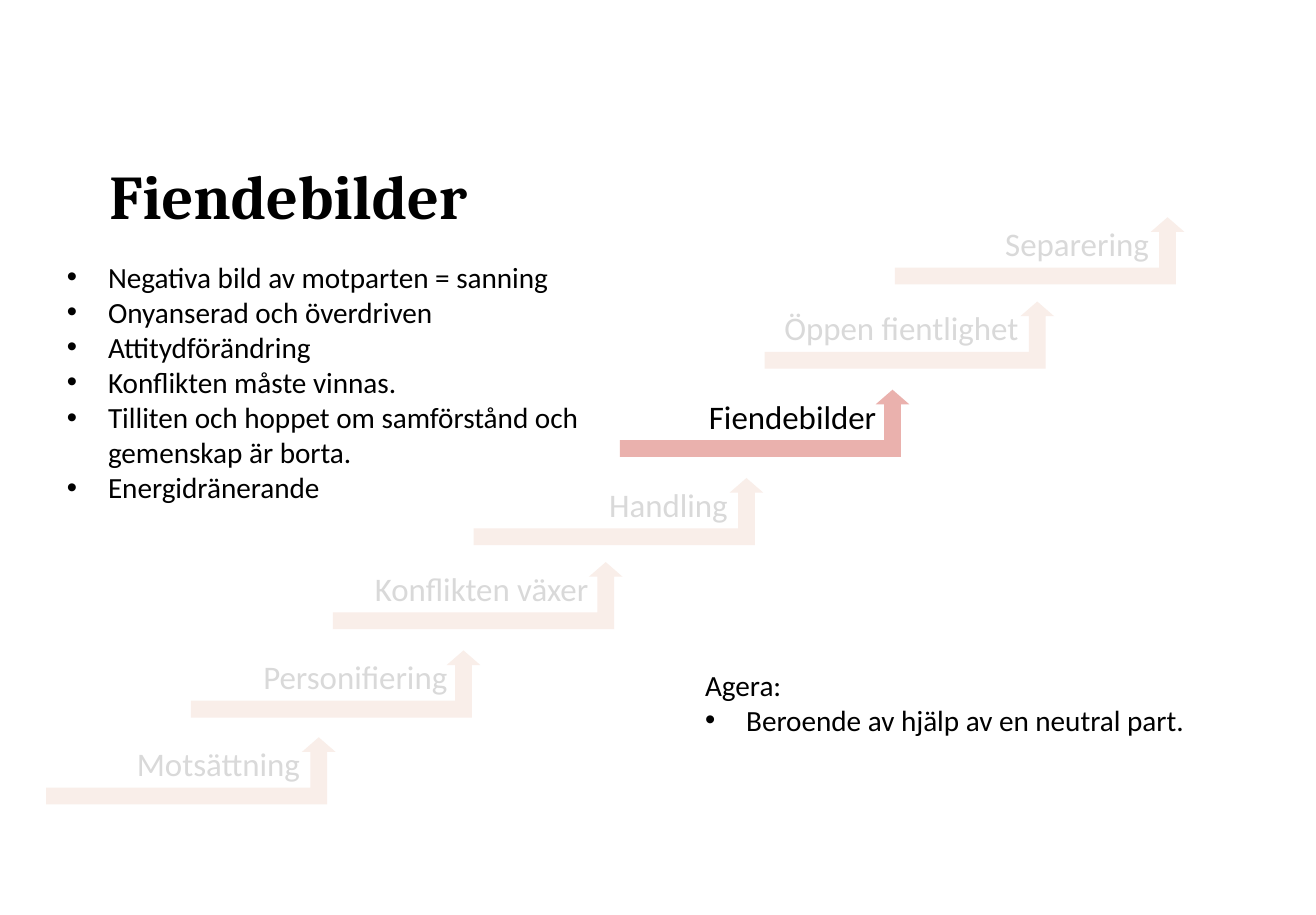
from typing import NamedTuple

from lxml.etree import SubElement
from pptx import Presentation
from pptx.dml.color import RGBColor
from pptx.enum.shapes import MSO_SHAPE as Shape
from pptx.enum.text import MSO_ANCHOR as Anchor, MSO_AUTO_SIZE as AutoSize, PP_ALIGN as Align
from pptx.oxml.ns import qn
from pptx.util import Pt

COLORS = {
    "text": "000000",
    "muted_text": "D9D9D9",
    "arrow": "EAB1AD",
    "muted_arrow": "F9EEE9",
}
ARROW_SIZE = (158.4, 36.7)
LABEL_SIZE = (150.5, 28.8)
BULLET_INDENT = 22.5


class Step(NamedTuple):
    label: str
    label_left: float
    arrow_left: float
    top: float
    active: bool = False


class Line(NamedTuple):
    text: str
    bullet: bool = True


STEPS = [
    Step("Motsättning", 13.7, 25.2, 403.2),
    Step("Personifiering", 94.3, 104.4, 355.7),
    Step("Konflikten växer", 171.4, 182.2, 307.4),
    Step("Handling", 247.7, 259.2, 261.4),
    Step("Fiendebilder", 329, 339.1, 213.1, active=True),
    Step("Öppen fientlighet", 406.8, 418.3, 164.9),
    Step("Separering", 478.1, 489.6, 118.8),
]
TRAITS = [
    Line("Negativa bild av motparten = sanning"),
    Line("Onyanserad och överdriven"),
    Line("Attitydförändring"),
    Line("Konflikten måste vinnas."),
    Line("Tilliten och hoppet om samförstånd och gemenskap är borta."),
    Line("Energidränerande"),
]
ACTIONS = [
    Line("Agera:", bullet=False),
    Line("Beroende av hjälp av en neutral part."),
]


def write(para, text: str, *, size: float, font: str = "Calibri", color: str = "text",
          bold: bool = False, align=Align.LEFT) -> None:
    para.alignment = align
    span = para.add_run()
    span.text = text
    span.font.name = font
    span.font.size = Pt(size)
    span.font.bold = bold
    span.font.color.rgb = RGBColor.from_string(COLORS[color])


def add_bullet(para) -> None:
    props = para._p.get_or_add_pPr()
    props.set("marL", str(Pt(BULLET_INDENT)))
    props.set("indent", str(-Pt(BULLET_INDENT)))
    SubElement(props, qn("a:buFont"), typeface="Arial")
    SubElement(props, qn("a:buChar"), char="•")


def add_box(page, left: float, top: float, width: float, height: float):
    box = page.shapes.add_textbox(Pt(left), Pt(top), Pt(width), Pt(height))
    box.text_frame.word_wrap = True
    box.text_frame.auto_size = AutoSize.SHAPE_TO_FIT_TEXT
    return box


def add_lines(page, lines: list[Line], left: float, top: float, width: float, height: float) -> None:
    frame = add_box(page, left, top, width, height).text_frame
    for index, line in enumerate(lines):
        para = frame.add_paragraph() if index else frame.paragraphs[0]
        if line.bullet:
            add_bullet(para)
        write(para, line.text, size=16)


def add_step(page, step: Step) -> None:
    box = add_box(page, step.label_left, step.top, *LABEL_SIZE)
    box.text_frame.margin_right = 0
    write(box.text_frame.paragraphs[0], step.label, size=18, align=Align.RIGHT,
          color="text" if step.active else "muted_text")

    arrow = page.shapes.add_shape(Shape.BENT_UP_ARROW, Pt(step.arrow_left), Pt(step.top),
                                  *map(Pt, ARROW_SIZE))
    arrow.adjustments[2] = 0.218
    arrow.shadow.inherit = False
    arrow.line.fill.background()
    arrow.fill.solid()
    arrow.fill.fore_color.rgb = RGBColor.from_string(
        COLORS["arrow" if step.active else "muted_arrow"])


def add_title(page, text: str) -> None:
    title = page.shapes.title
    title.left, title.top, title.width, title.height = map(Pt, (59.8, 60.5, 338.4, 97.2))
    frame = title.text_frame
    frame.margin_left = frame.margin_top = frame.margin_right = frame.margin_bottom = 0
    frame.vertical_anchor = Anchor.MIDDLE
    frame.word_wrap = True
    para = frame.paragraphs[0]
    para.line_spacing = 0.9
    write(para, text, size=34, font="Cambria", bold=True)


def main() -> None:
    deck = Presentation()
    deck.slide_width, deck.slide_height = Pt(720), Pt(500.4)
    page = deck.slides.add_slide(deck.slide_layouts[5])

    add_title(page, "Fiendebilder")

    # Staircase of conflict stages
    for step in STEPS:
        add_step(page, step)

    # Description and advice for the active stage
    add_lines(page, TRAITS, 29.5, 138.2, 331.9, 143.3)
    add_lines(page, ACTIONS, 378.7, 361.4, 311.8, 46.1)

    deck.save("out.pptx")


if __name__ == "__main__":
    main()
